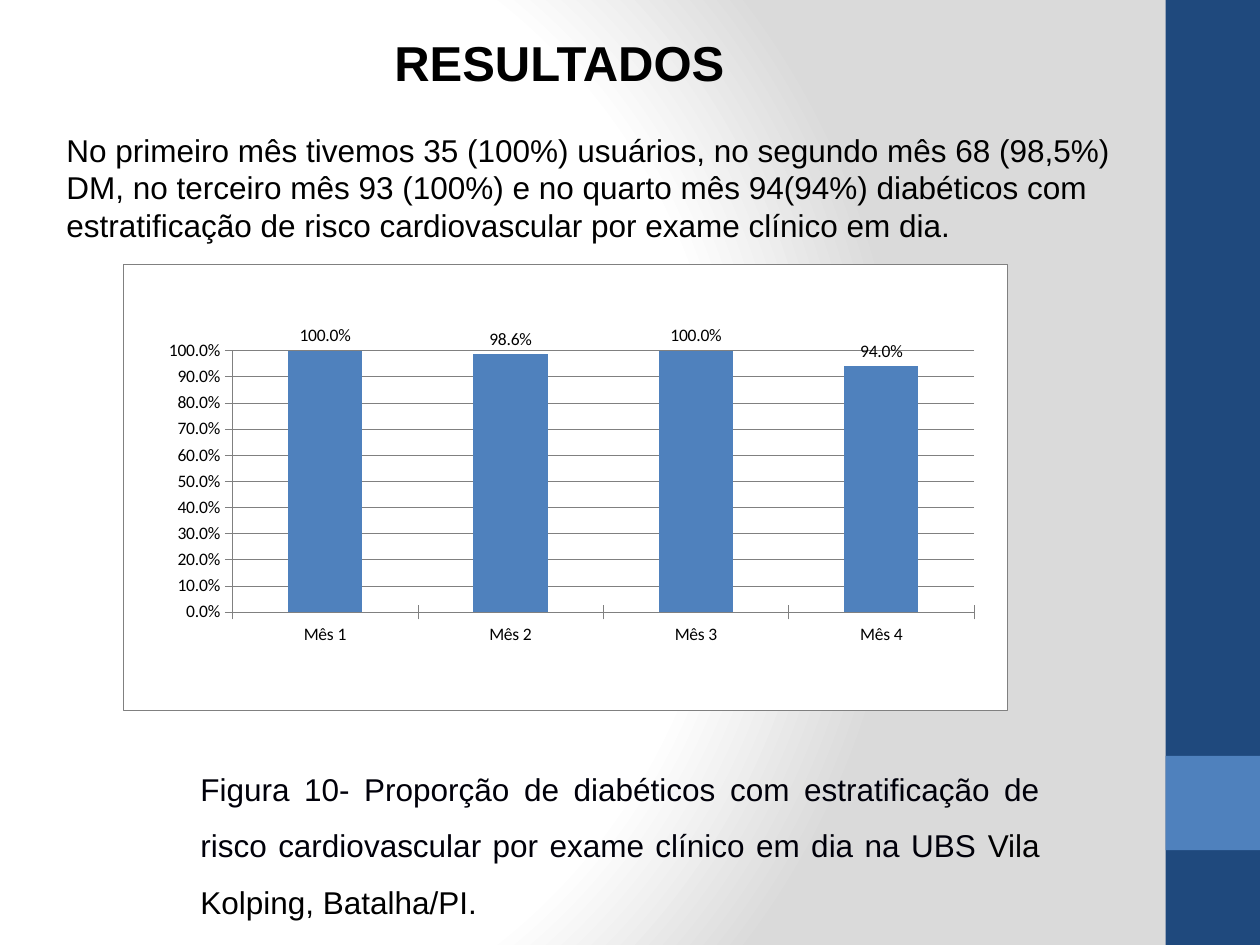
"""Build the results slide with its column chart of cardiovascular risk stratification."""
from dataclasses import dataclass, field

from lxml import etree
from pptx import Presentation
from pptx.chart.data import CategoryChartData
from pptx.dml.color import RGBColor
from pptx.enum.chart import XL_CHART_TYPE, XL_LABEL_POSITION, XL_TICK_MARK
from pptx.enum.shapes import MSO_SHAPE
from pptx.enum.text import PP_ALIGN
from pptx.oxml import parse_xml
from pptx.oxml.ns import nsdecls, qn
from pptx.util import Cm, Pt

COLUMNS = XL_CHART_TYPE.COLUMN_CLUSTERED
OUTSIDE_END = XL_LABEL_POSITION.OUTSIDE_END
CROSS = XL_TICK_MARK.CROSS
RECTANGLE = MSO_SHAPE.RECTANGLE
JUSTIFY = PP_ALIGN.JUSTIFY

COLORS = {
    "text": "000000",
    "caption": "00000A",
    "navy": "1F497D",
    "blue": "4F81BD",
    "grey": "808080",
    "white": "FFFFFF",
    "shade": "DADADA",
}
PERCENT = "0.0%"
MONTHS = {"Mês 1": 1, "Mês 2": 0.986, "Mês 3": 1, "Mês 4": 0.94}
PLOT_LAYOUT = {"x": 0.123, "y": 0.193, "w": 0.84, "h": 0.587}


@dataclass
class Box:
    """Place on the slide, in centimetres."""
    left: float
    top: float
    width: float
    height: float

    def lengths(self) -> tuple:
        """Return the four lengths in the order python-pptx expects."""
        return Cm(self.left), Cm(self.top), Cm(self.width), Cm(self.height)


@dataclass
class Band:
    """Filled rectangle of the side stripe."""
    box: Box
    color: str


@dataclass
class TextBlock:
    """Text box holding one paragraph of coloured runs."""
    box: Box
    runs: list
    font: dict
    paragraph: dict = field(default_factory=dict)
    frame: dict = field(default_factory=dict)
    indent: float = 0


BANDS = [
    Band(Box(23.5, 0, 1.9, 19.05), "navy"),
    Band(Box(23.5, 15.24, 1.9, 1.9), "blue"),
]
CHART_BOX = Box(2.49, 5.33, 17.81, 8.99)
BODY_FONT = {"name": "Arial", "size": Pt(18)}
TEXTS = [
    TextBlock(
        Box(1.3, 15.01, 21.41, 3.71),
        [("Figura 10- Proporção de diabéticos com estratificação de risco "
          "cardiovascular por exame clínico em dia na UBS", "caption"),
         (" Vila Kolping, Batalha/PI.", "text")],
        BODY_FONT,
        {"alignment": JUSTIFY, "line_spacing": 1.5},
        {"margin_right": Cm(1.75)},
        2.49,
    ),
    TextBlock(
        Box(1.09, 2.51, 21.59, 2.57),
        [("No primeiro mês tivemos 35 (100%) usuários, no segundo mês 68 (98,5%) DM, "
          "no terceiro mês 93 (100%) e no quarto mês 94(94%) diabéticos com "
          "estratificação de risco cardiovascular por exame clínico em dia.", "text")],
        BODY_FONT,
    ),
    TextBlock(
        Box(7.7, 0.53, 7.59, 1.45),
        [("RESULTADOS", "text")],
        {"name": "Arial", "size": Pt(28), "bold": True},
    ),
]


def rgb(name: str) -> RGBColor:
    """Return the named colour."""
    return RGBColor.from_string(COLORS[name])


def apply(target, values: dict) -> None:
    """Set each format value on the target."""
    for name, value in values.items():
        setattr(target, name, value)


def paint_background(slide) -> None:
    """Give the slide its circular gradient."""
    slide.background.fill.gradient()
    gradient = slide.element.find(".//" + qn("a:gradFill"))
    stops = "".join(
        f'<a:gs pos="{position}000"><a:srgbClr val="{COLORS[color]}"/></a:gs>'
        for position, color in ((0, "white"), (75, "white"), (100, "shade"))
    )
    gradient.getparent().replace(gradient, parse_xml(
        f'<a:gradFill {nsdecls("a")} rotWithShape="1"><a:gsLst>{stops}</a:gsLst>'
        '<a:path path="circle"><a:fillToRect l="20000" t="50000" r="100000" b="50000"/>'
        '</a:path></a:gradFill>'
    ))


def draw_band(slide, band: Band) -> None:
    """Draw one plain rectangle."""
    shape = slide.shapes.add_shape(RECTANGLE, *band.box.lengths())
    shape.shadow.inherit = False
    shape.fill.solid()
    shape.fill.fore_color.rgb = rgb(band.color)
    shape.line.fill.background()


def draw_text(slide, block: TextBlock) -> None:
    """Draw one wrapped text box."""
    frame = slide.shapes.add_textbox(*block.box.lengths()).text_frame
    apply(frame, {"word_wrap": True, **block.frame})
    paragraph = frame.paragraphs[0]
    apply(paragraph, block.paragraph)
    if block.indent:
        properties = paragraph._p.get_or_add_pPr()
        properties.set("marL", str(Cm(block.indent)))
        properties.set("indent", "0")
    for text, color in block.runs:
        run = paragraph.add_run()
        run.text = text
        apply(run.font, block.font)
        run.font.color.rgb = rgb(color)


def style_line(line) -> None:
    """Make a chart line thin and grey."""
    line.width = Pt(0.25)
    line.color.rgb = rgb("grey")


def area_properties(line: str):
    """Return white chart area properties with the given outline fill."""
    return parse_xml(
        f'<c:spPr {nsdecls("c", "a")}><a:solidFill><a:srgbClr val="{COLORS["white"]}"/>'
        f'</a:solidFill><a:ln w="{Pt(0.25)}">{line}</a:ln></c:spPr>'
    )


def style_areas(chart) -> None:
    """Set the chart border, the white fills and the inner plot layout."""
    border = f'<a:solidFill><a:srgbClr val="{COLORS["grey"]}"/></a:solidFill>'
    chart.element.find(qn("c:chart")).addnext(area_properties(border))
    plot_area = chart.element.find(".//" + qn("c:plotArea"))
    plot_area.append(area_properties("<a:noFill/>"))
    layout = plot_area.find(qn("c:layout"))
    if layout is None:
        layout = etree.Element(qn("c:layout"))
        plot_area.insert(0, layout)
    manual = etree.SubElement(layout, qn("c:manualLayout"))
    values = {"layoutTarget": "inner", "xMode": "edge", "yMode": "edge", **PLOT_LAYOUT}
    for name, value in values.items():
        etree.SubElement(manual, qn(f"c:{name}")).set("val", str(value))


def draw_chart(slide) -> None:
    """Draw the monthly column chart."""
    data = CategoryChartData(number_format=PERCENT)
    data.categories = list(MONTHS)
    data.add_series("Series 1", list(MONTHS.values()))
    chart = slide.shapes.add_chart(COLUMNS, *CHART_BOX.lengths(), data).chart
    apply(chart, {"has_title": False, "has_legend": False})
    apply(chart.font, {"name": "Calibri", "size": Pt(10)})
    chart.font.color.rgb = rgb("text")
    for axis in (chart.category_axis, chart.value_axis):
        axis.major_tick_mark = CROSS
        style_line(axis.format.line)
    axis = chart.value_axis
    apply(axis, {"minimum_scale": 0, "maximum_scale": 1, "major_unit": 0.1})
    apply(axis.tick_labels, {"number_format": PERCENT, "number_format_is_linked": False})
    style_line(axis.major_gridlines.format.line)
    plot = chart.plots[0]
    apply(plot, {"gap_width": 150, "vary_by_categories": False, "has_data_labels": True})
    apply(plot.data_labels, {
        "show_value": True, "position": OUTSIDE_END,
        "number_format": PERCENT, "number_format_is_linked": False,
    })
    fill = plot.series[0].format.fill
    fill.solid()
    fill.fore_color.rgb = rgb("blue")
    style_areas(chart)


def main() -> None:
    """Build and save the presentation."""
    presentation = Presentation()
    apply(presentation, {"slide_width": Cm(25.4), "slide_height": Cm(19.05)})
    slide = presentation.slides.add_slide(presentation.slide_layouts[6])
    paint_background(slide)
    for band in BANDS:
        draw_band(slide, band)
    draw_chart(slide)
    for block in TEXTS:
        draw_text(slide, block)
    presentation.save("out.pptx")


if __name__ == "__main__":
    main()
